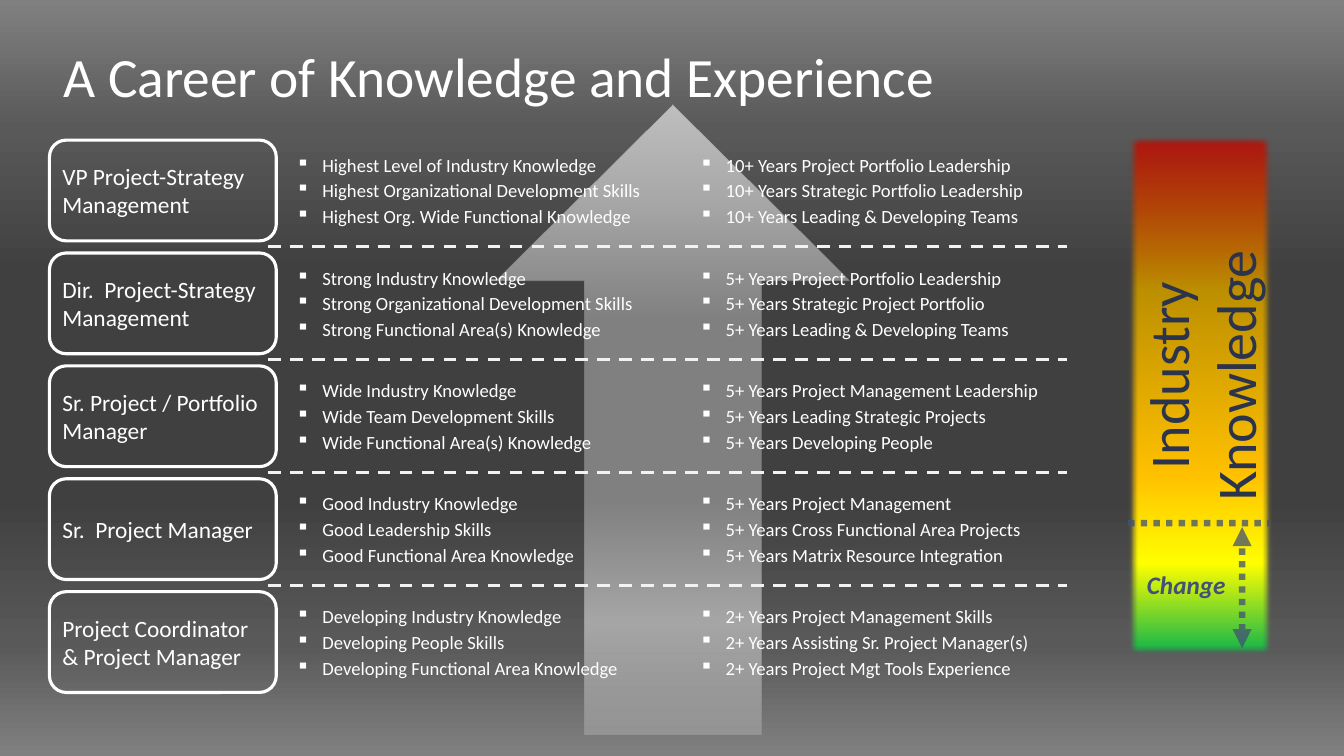
from dataclasses import dataclass
from typing import NamedTuple

from lxml import etree
from pptx import Presentation
from pptx.dml.color import RGBColor
from pptx.enum.dml import MSO_LINE_DASH_STYLE
from pptx.enum.shapes import MSO_CONNECTOR_TYPE, MSO_SHAPE
from pptx.enum.text import MSO_ANCHOR, MSO_AUTO_SIZE, PP_ALIGN
from pptx.oxml.ns import qn
from pptx.util import Inches, Pt

STRAIGHT = MSO_CONNECTOR_TYPE.STRAIGHT
RECTANGLE = MSO_SHAPE.RECTANGLE
ROUNDED = MSO_SHAPE.ROUNDED_RECTANGLE
UP_ARROW = MSO_SHAPE.UP_ARROW
DASH = MSO_LINE_DASH_STYLE.DASH
DOT = MSO_LINE_DASH_STYLE.ROUND_DOT
TOP, MIDDLE = MSO_ANCHOR.TOP, MSO_ANCHOR.MIDDLE
LEFT, CENTER = PP_ALIGN.LEFT, PP_ALIGN.CENTER


class Stop(NamedTuple):
    percent: int
    color: str
    opacity: int = 100


@dataclass(frozen=True)
class Theme:
    font: str = "Calibri"
    white: str = "FFFFFF"
    divider: str = "F2F2F2"
    marker: str = "425176"
    scale_label: str = "2B344C"
    title_size: float = 39.6
    role_size: float = 16.7
    bullet_size: float = 13.3
    scale_size: float = 40
    change_size: float = 18
    background: tuple[Stop, ...] = (
        Stop(0, "808080"), Stop(17, "595959"), Stop(36, "404040"),
        Stop(66, "404040"), Stop(85, "595959"), Stop(100, "808080"))
    arrow: tuple[Stop, ...] = (
        Stop(0, "BFBFBF"), Stop(16, "A6A6A6"), Stop(34, "808080"),
        Stop(63, "808080"), Stop(82, "A6A6A6"), Stop(99, "BFBFBF", 40))
    scale: tuple[Stop, ...] = (
        Stop(0, "C00000", 80), Stop(30, "BC8F00"), Stop(65, "FFC000"),
        Stop(82, "FFFF00"), Stop(100, "00B050"))


THEME = Theme()


@dataclass(frozen=True)
class Level:
    role: str
    knowledge: tuple[str, ...]
    experience: tuple[str, ...]


LEVELS = (
    Level("VP Project-Strategy Management",
          ("Highest Level of Industry Knowledge",
           "Highest Organizational Development Skills",
           "Highest Org. Wide Functional Knowledge"),
          ("10+ Years Project Portfolio Leadership",
           "10+ Years Strategic Portfolio Leadership",
           "10+ Years Leading & Developing Teams")),
    Level("Dir.  Project-Strategy Management",
          ("Strong Industry Knowledge",
           "Strong Organizational Development Skills",
           "Strong Functional Area(s) Knowledge"),
          ("5+ Years Project Portfolio Leadership",
           "5+ Years Strategic Project Portfolio",
           "5+ Years Leading & Developing Teams")),
    Level("Sr. Project / Portfolio Manager",
          ("Wide Industry Knowledge",
           "Wide Team Development Skills",
           "Wide Functional Area(s) Knowledge"),
          ("5+ Years Project Management Leadership",
           "5+ Years Leading Strategic Projects",
           "5+ Years Developing People")),
    Level("Sr.  Project Manager",
          ("Good Industry Knowledge",
           "Good Leadership Skills",
           "Good Functional Area Knowledge"),
          ("5+ Years Project Management",
           "5+ Years Cross Functional Area Projects",
           "5+ Years Matrix Resource Integration")),
    Level("Project Coordinator & Project Manager",
          ("Developing Industry Knowledge",
           "Developing People Skills",
           "Developing Functional Area Knowledge"),
          ("2+ Years Project Management Skills",
           "2+ Years Assisting Sr. Project Manager(s)",
           "2+ Years Project Mgt Tools Experience")),
)
FIRST_TOP, ROW_STEP, ROW_HEIGHT = 1.39, 1.12, 1


def inches(*lengths: float) -> list[int]:
    return [Inches(length) for length in lengths]


def paint_gradient(fill, owner, stops: tuple[Stop, ...]) -> None:
    """Run the stops from top to bottom; owner is the element holding the fill."""
    fill.gradient()
    fill.gradient_angle = 270
    stop_list = next(owner.iter(qn("a:gsLst")))
    for old_stop in list(stop_list):
        stop_list.remove(old_stop)
    for stop in stops:
        node = etree.SubElement(stop_list, qn("a:gs"), pos=str(stop.percent * 1000))
        color = etree.SubElement(node, qn("a:srgbClr"), val=stop.color)
        if stop.opacity < 100:
            etree.SubElement(color, qn("a:alpha"), val=str(stop.opacity * 1000))


def write_text(box, lines: tuple[str, ...], *, size: float, color: str,
               align=LEFT, anchor=MIDDLE, bold=False, italic=False,
               bullet: str = "", gap: float = 0, wrap=True,
               insets: tuple[float, float] = (0.1, 0.05)) -> None:
    """Fill a shape with one paragraph per line; insets are side and top/bottom."""
    frame = box.text_frame
    frame.auto_size = MSO_AUTO_SIZE.NONE
    frame.word_wrap = wrap
    frame.vertical_anchor = anchor
    frame.margin_left = frame.margin_right = Inches(insets[0])
    frame.margin_top = frame.margin_bottom = Inches(insets[1])
    for index, line in enumerate(lines):
        para = frame.add_paragraph() if index else frame.paragraphs[0]
        para.alignment = align
        if bullet:
            properties = para._p.get_or_add_pPr()
            properties.set("marL", str(Inches(0.26)))
            properties.set("indent", str(-Inches(0.26)))
            etree.SubElement(properties, qn("a:buChar"), char=bullet)
        if index and gap:
            para.space_before = Pt(gap)
        span = para.add_run()
        span.text = line
        font = span.font
        font.name, font.size = THEME.font, Pt(size)
        font.bold, font.italic = bold, italic
        font.color.rgb = RGBColor.from_string(color)


def add_plain_shape(page, kind, *bounds: float):
    shape = page.shapes.add_shape(kind, *inches(*bounds))
    shape.shadow.inherit = False
    shape.fill.background()
    shape.line.fill.background()
    return shape


def add_line(page, *ends: float, color: str, width: float, dash,
             opacity: int = 100, arrowheads=False) -> None:
    connector = page.shapes.add_connector(STRAIGHT, *inches(*ends))
    line = connector.line
    line.width = Pt(width)
    line.color.rgb = RGBColor.from_string(color)
    line.dash_style = dash
    properties = connector._element.spPr
    if opacity < 100:
        shade = next(properties.iter(qn("a:srgbClr")))
        etree.SubElement(shade, qn("a:alpha"), val=str(opacity * 1000))
    if arrowheads:
        outline = properties.find(qn("a:ln"))
        for end in ("a:headEnd", "a:tailEnd"):
            etree.SubElement(outline, qn(end), type="triangle")
    etree.SubElement(properties, qn("a:effectLst"))


def add_level(page, level: Level, top: float) -> None:
    role = add_plain_shape(page, ROUNDED, 0.49, top, 2.25, ROW_HEIGHT)
    role.line.color.rgb = RGBColor.from_string(THEME.white)
    role.line.width = Pt(2.25)
    write_text(role, (level.role,), size=THEME.role_size, color=THEME.white,
               insets=(0.08, 0.04))
    for left, lines in ((2.81, level.knowledge), (6.81, level.experience)):
        column = add_plain_shape(page, ROUNDED, left, top, 4.17, ROW_HEIGHT)
        write_text(column, lines, size=THEME.bullet_size, color=THEME.white,
                   bullet="▪", gap=2.4, insets=(0.08, 0))


def add_knowledge_scale(page) -> None:
    bar = add_plain_shape(page, RECTANGLE, 11.16, 1.32, 1.48, 5.2)
    paint_gradient(bar.fill, bar._element, THEME.scale)
    effects = bar._element.spPr.find(qn("a:effectLst"))
    etree.SubElement(effects, qn("a:softEdge"), rad=str(Pt(5)))
    label = page.shapes.add_textbox(*inches(10.55, 3, 2.71, 1.45))
    label.rotation = 270
    write_text(label, ("Industry", "Knowledge"), size=THEME.scale_size,
               color=THEME.scale_label, align=CENTER, wrap=False)
    marker = dict(color=THEME.marker, width=4.5, dash=DOT, opacity=75)
    add_line(page, 11.19, 5.19, 12.59, 5.19, **marker)
    add_line(page, 12.32, 6.43, 12.32, 5.23, arrowheads=True, **marker)
    change = page.shapes.add_textbox(*inches(11.27, 5.6, 0.99, 0.4))
    write_text(change, ("Change",), size=THEME.change_size, color=THEME.marker,
               align=CENTER, anchor=TOP, bold=True, italic=True, wrap=False)


def main() -> None:
    deck = Presentation()
    deck.slide_width, deck.slide_height = inches(13.33, 7.5)
    page = deck.slides.add_slide(deck.slide_layouts[5])
    paint_gradient(page.background.fill, page._element, THEME.background)
    arrow = add_plain_shape(page, UP_ARROW, 4.92, 1.04, 3.5, 6.25)
    paint_gradient(arrow.fill, arrow._element, THEME.arrow)
    title = page.shapes.title
    title.left, title.top, title.width, title.height = inches(0.53, 0.35, 11, 0.8)
    write_text(title, ("A Career of Knowledge and Experience",),
               size=THEME.title_size, color=THEME.white)
    arrow._element.addnext(title._element)
    for index, level in enumerate(LEVELS):
        top = FIRST_TOP + index * ROW_STEP
        add_level(page, level, top)
        if index:
            add_line(page, 2.66, top - 0.06, 10.58, top - 0.06,
                     color=THEME.divider, width=2.25, dash=DASH)
    add_knowledge_scale(page)
    deck.save("out.pptx")


if __name__ == "__main__":
    main()
